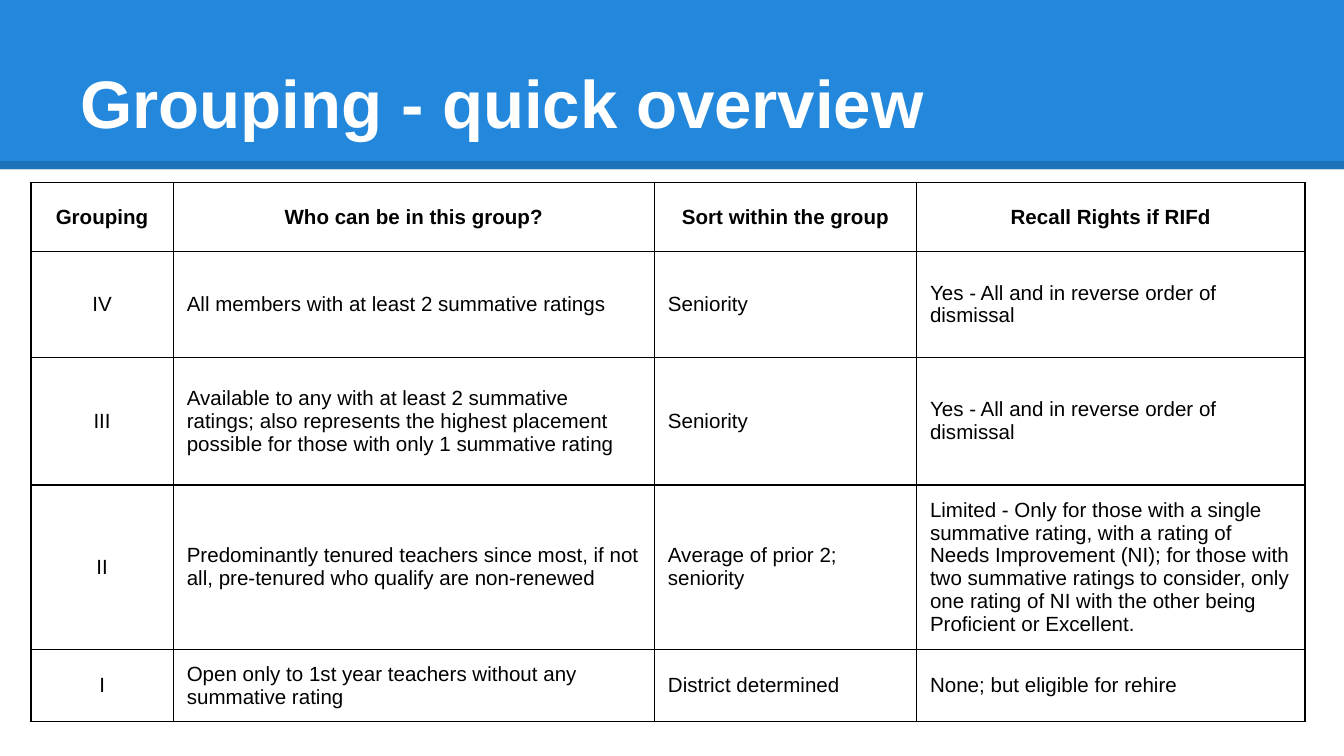
import lxml.etree
import pptx
import pptx.util
import pptx.dml.color
import pptx.enum.shapes
import pptx.enum.text
import pptx.oxml.ns

Inches, Pt = pptx.util.Inches, pptx.util.Pt
PP_ALIGN = pptx.enum.text.PP_ALIGN
ANCHOR = pptx.enum.text.MSO_ANCHOR
qn = pptx.oxml.ns.qn

COLORS = {"band": "2388DB", "white": "FFFFFF", "black": "000000"}
FONT = "Arial"
TITLE = "Grouping - quick overview"
HEADER = ["Grouping", "Who can be in this group?", "Sort within the group",
          "Recall Rights if RIFd"]
RECALL_ALL = "Yes - All and in reverse order of dismissal"
GROUPS = [
    ["IV", "All members with at least 2 summative ratings", "Seniority", RECALL_ALL],
    ["III", "Available to any with at least 2 summative ratings; also represents the "
     "highest placement possible for those with only 1 summative rating",
     "Seniority", RECALL_ALL],
    ["II", "Predominantly tenured teachers since most, if not all, pre-tenured who "
     "qualify are non-renewed", "Average of prior 2; seniority",
     "Limited - Only for those with a single summative rating, with a rating of Needs "
     "Improvement (NI); for those with two summative ratings to consider, only one "
     "rating of NI with the other being Proficient or Excellent."],
    ["I", "Open only to 1st year teachers without any summative rating",
     "District determined", "None; but eligible for rehire"],
]
COLUMN_WIDTHS = [1.06, 3.58, 1.95, 2.89]
ROW_HEIGHTS = [0.51, 0.79, 0.95, 1.22, 0.54]
TABLE_LEFT, TABLE_TOP = 0.23, 1.36
PAGE_WIDTH = 10
PAGE_HEIGHT = PAGE_WIDTH * 9 / 16
MARGIN = Inches(0.1)


def rgb(name):
    return pptx.dml.color.RGBColor.from_string(COLORS[name])


def write(frame, text, size, color, bold, align):
    frame.text = text
    para = frame.paragraphs[0]
    para.alignment = align
    font = para.runs[0].font
    font.name, font.size, font.bold = FONT, Pt(size), bold
    font.color.rgb = rgb(color)


def set_margins(box):
    box.margin_left = box.margin_right = box.margin_top = box.margin_bottom = MARGIN


def add_borders(cell):
    """Draw all four cell edges; the edges must precede the fill in the XML."""
    properties = cell._tc.get_or_add_tcPr()
    for index, edge in enumerate(["a:lnL", "a:lnR", "a:lnT", "a:lnB"]):
        line = lxml.etree.Element(qn(edge), w=str(Pt(0.75)))
        fill = lxml.etree.SubElement(line, qn("a:solidFill"))
        lxml.etree.SubElement(fill, qn("a:srgbClr"), val=COLORS["black"])
        properties.insert(index, line)


def add_band(page):
    band = page.shapes.add_shape(pptx.enum.shapes.MSO_SHAPE.RECTANGLE,
                                 0, 0, Inches(PAGE_WIDTH), Inches(1.26))
    band.shadow.inherit = False
    band.fill.solid()
    band.fill.fore_color.rgb = rgb("band")
    band.line.fill.background()

    rule = page.shapes.add_connector(pptx.enum.shapes.MSO_CONNECTOR.STRAIGHT,
                                     0, Inches(1.23), Inches(PAGE_WIDTH), Inches(1.23))
    rule.line.width = Pt(4.5)
    rule.line.color.rgb = rgb("black")
    properties = rule._element.spPr
    color = properties.find(".//" + qn("a:srgbClr"))
    lxml.etree.SubElement(color, qn("a:alpha"), val="15000")
    lxml.etree.SubElement(properties, qn("a:effectLst"))


def add_title(page):
    title = page.shapes.title
    title.left, title.top = Inches(0.5), Inches(0.23)
    title.width, title.height = Inches(9), Inches(0.93)
    frame = title.text_frame
    write(frame, TITLE, 36, "white", True, PP_ALIGN.LEFT)
    frame.word_wrap = True
    frame.auto_size = pptx.enum.text.MSO_AUTO_SIZE.NONE
    frame.vertical_anchor = ANCHOR.BOTTOM
    set_margins(frame)
    page.shapes._spTree.append(title._element)  # bring in front of the band


def add_groups_table(page):
    rows = [HEADER] + GROUPS
    table = page.shapes.add_table(
        len(rows), len(HEADER), Inches(TABLE_LEFT), Inches(TABLE_TOP),
        Inches(sum(COLUMN_WIDTHS)), Inches(sum(ROW_HEIGHTS))).table
    table.horz_banding = False
    for column, width in zip(table.columns, COLUMN_WIDTHS):
        column.width = Inches(width)
    for row, height in zip(table.rows, ROW_HEIGHTS):
        row.height = Inches(height)
    for r, texts in enumerate(rows):
        for c, text in enumerate(texts):
            cell = table.cell(r, c)
            centered = r == 0 or c == 0
            write(cell.text_frame, text, 11, "black", r == 0,
                  PP_ALIGN.CENTER if centered else PP_ALIGN.LEFT)
            cell.vertical_anchor = ANCHOR.MIDDLE
            set_margins(cell)
            cell.fill.solid()
            cell.fill.fore_color.rgb = rgb("white")
            add_borders(cell)


def main():
    deck = pptx.Presentation()
    deck.slide_width, deck.slide_height = Inches(PAGE_WIDTH), Inches(PAGE_HEIGHT)
    page = deck.slides.add_slide(deck.slide_layouts.get_by_name("Title Only"))
    add_band(page)
    add_title(page)
    add_groups_table(page)
    deck.save("out.pptx")


if __name__ == "__main__":
    main()
